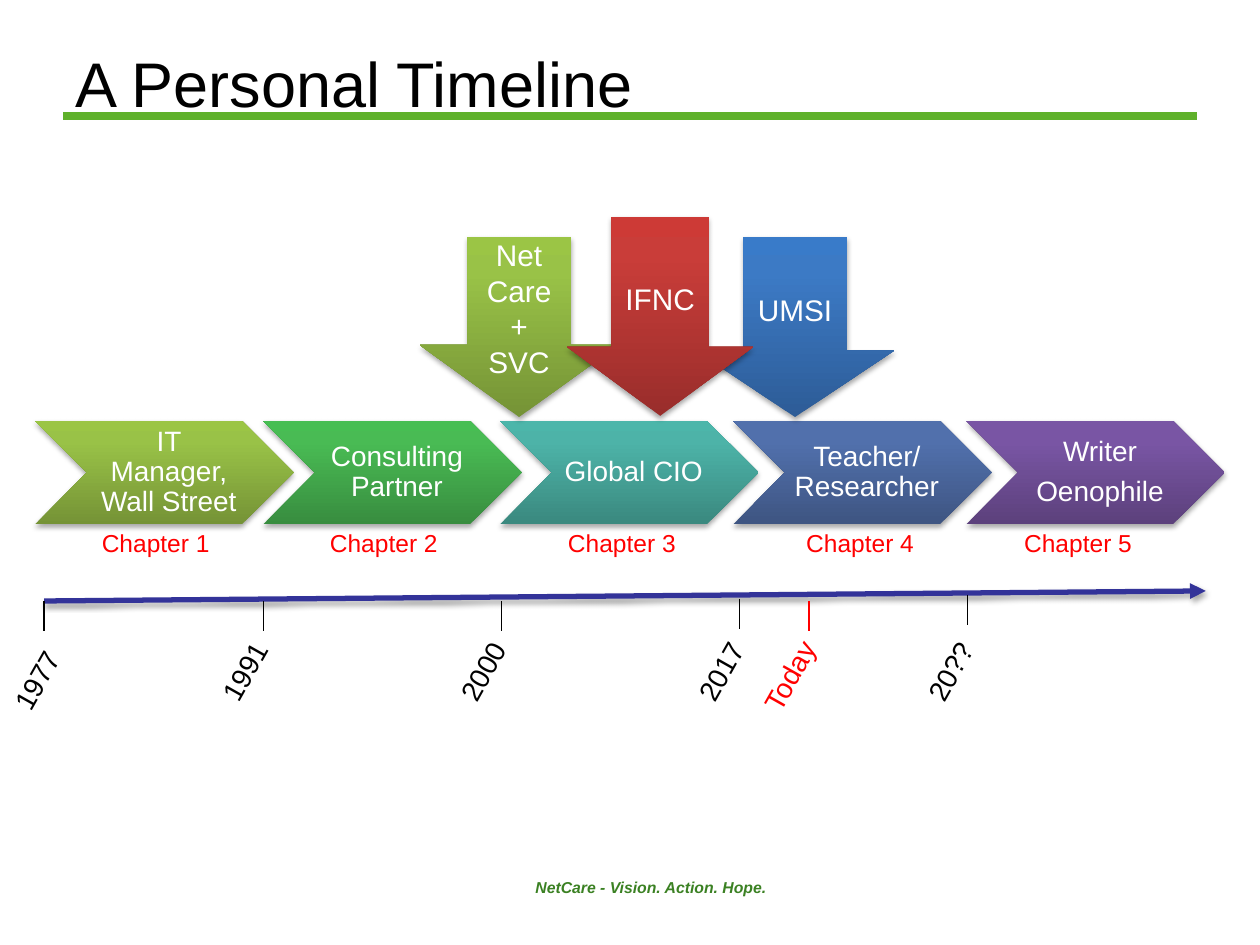
"""Build the personal timeline slide: career chevrons, side roles and a dated axis."""
from copy import deepcopy

from lxml import etree
from pptx import Presentation
from pptx.dml.color import RGBColor
from pptx.enum.shapes import MSO_CONNECTOR, MSO_SHAPE
from pptx.enum.text import MSO_ANCHOR, PP_ALIGN
from pptx.oxml import parse_xml
from pptx.oxml.ns import nsdecls, qn
from pptx.util import Inches, Pt

STRAIGHT = MSO_CONNECTOR.STRAIGHT
CHEVRON, DOWN_ARROW = MSO_SHAPE.CHEVRON, MSO_SHAPE.DOWN_ARROW
MIDDLE, TOP = MSO_ANCHOR.MIDDLE, MSO_ANCHOR.TOP
LEFT, CENTER = PP_ALIGN.LEFT, PP_ALIGN.CENTER

BLACK = RGBColor(0x00, 0x00, 0x00)
WHITE = RGBColor(0xFF, 0xFF, 0xFF)
RED = RGBColor(0xFF, 0x00, 0x00)
NAVY = RGBColor(0x33, 0x33, 0x99)
RULE_GREEN = RGBColor(0x5F, 0xB1, 0x2B)
FOOTER_GREEN = RGBColor(0x3B, 0x81, 0x23)
LIME = (RGBColor(0x75, 0x93, 0x36), RGBColor(0x99, 0xC2, 0x47), RGBColor(0x9B, 0xC5, 0x45))
GREEN = (RGBColor(0x38, 0x8D, 0x3F), RGBColor(0x49, 0xBB, 0x54), RGBColor(0x47, 0xBE, 0x53))
TEAL = (RGBColor(0x3A, 0x89, 0x7F), RGBColor(0x4D, 0xB3, 0xA8), RGBColor(0x4C, 0xB6, 0xAA))
STEEL = (RGBColor(0x3E, 0x55, 0x82), RGBColor(0x51, 0x70, 0xAC), RGBColor(0x50, 0x6F, 0xAF))
PURPLE = (RGBColor(0x5C, 0x41, 0x7C), RGBColor(0x79, 0x55, 0xA4), RGBColor(0x79, 0x55, 0xA6))
BLUE = (RGBColor(0x2D, 0x5C, 0x97), RGBColor(0x3C, 0x7A, 0xC5), RGBColor(0x39, 0x7B, 0xC9))
CRIMSON = (RGBColor(0x99, 0x2D, 0x2B), RGBColor(0xC9, 0x3D, 0x39), RGBColor(0xCD, 0x3A, 0x36))

SHADOW = (f'<a:effectLst {nsdecls("a")}><a:outerShdw blurRad="39370" dist="22860" dir="5400000" '
          'rotWithShape="0"><a:srgbClr val="000000"><a:alpha val="35000"/></a:srgbClr>'
          '</a:outerShdw></a:effectLst>')
CHEVRON_TOP, CHEVRON_W, CHEVRON_H = 3.34, 2.05, 0.82
CHAPTER_TOP, TICK_H = 4.14, 0.24


def write(sp, lines, size, color, align=LEFT, anchor=TOP, spacing=None, before=0, **style):
    tf = sp.text_frame
    tf.vertical_anchor = anchor
    for i, line in enumerate(lines):
        p = tf.paragraphs[0] if i == 0 else tf.add_paragraph()
        p.alignment, p.line_spacing = align, spacing
        if i and before:
            p.space_before = Pt(before)
        r = p.add_run()
        r.text = line
        r.font.color.rgb = color
        for key, value in dict(size=Pt(size), name="Arial", **style).items():
            setattr(r.font, key, value)


def add_block(kind, box, adjustments, colors):
    sp = s.shapes.add_shape(kind, *map(Inches, box))
    for i, value in enumerate(adjustments):
        sp.adjustments[i] = value
    sp.fill.gradient()
    sp.fill.gradient_angle = 90
    stops = sp._element.spPr.find(".//" + qn("a:gsLst"))
    stops.insert(1, deepcopy(stops[0]))
    for stop, position, color in zip(sp.fill.gradient_stops, (0, 0.8, 1), colors):
        stop.position = position
        stop.color.rgb = color
    sp.line.fill.background()
    sp._element.spPr.append(parse_xml(SHADOW))
    return sp


prs = Presentation()
prs.slide_width, prs.slide_height = Inches(10), Inches(7.5)
s = prs.slides.add_slide(prs.slide_layouts[5])

chapters = [
    (0.28, 0.71, ["IT Manager, Wall Street"], LIME),
    (2.09, 2.52, ["Consulting Partner"], GREEN),
    (3.97, 4.41, ["Global CIO"], TEAL),
    (5.82, 6.3, ["Teacher/ Researcher"], STEEL),
    (7.67, 8.03, ["Writer", "Oenophile"], PURPLE),
]
for number, (x, label_x, lines, colors) in enumerate(chapters, 1):
    sp = add_block(CHEVRON, (x, CHEVRON_TOP, CHEVRON_W, CHEVRON_H), [0.5], colors)
    tf = sp.text_frame
    tf.margin_left, tf.margin_right = Inches(0.07), 0
    tf.margin_top = tf.margin_bottom = Inches(0.02)
    write(sp, lines, 16, WHITE, CENTER, MIDDLE, spacing=0.9, before=5.6)
    sp = s.shapes.add_textbox(*map(Inches, (label_x, CHAPTER_TOP, 1.06, 0.34)))
    write(sp, [f"Chapter {number}"], 14, RED)

lines = [
    ((0.5, 0.92, 9.5, 0.92), RULE_GREEN, 4.5),
    ((0.35, 4.77, 9.57, 4.69), NAVY, 3),
]
ticks = [(0.35, 4.77, BLACK, 0.75), (2.09, 4.77, BLACK, 0.75), (3.98, 4.77, BLACK, 0.75),
         (5.87, 4.75, BLACK, 0.75), (7.68, 4.72, BLACK, 0.75), (6.42, 4.77, RED, 1)]
lines += [((x, y, x, y + TICK_H), color, width) for x, y, color, width in ticks]
for ends, color, width in lines:
    line = s.shapes.add_connector(STRAIGHT, *map(Inches, ends))
    line.line.color.rgb, line.line.width = color, Pt(width)
    if color == NAVY:
        etree.SubElement(line.line._get_or_add_ln(), qn("a:tailEnd"), type="triangle")
        line._element.spPr.append(parse_xml(SHADOW))
    else:
        etree.SubElement(line._element.spPr, qn("a:effectLst"))

dates = [("1977", -0.08, 5.17, 0.79, BLACK), ("1991", 1.57, 5.1, 0.79, BLACK),
         ("2000", 3.46, 5.1, 0.79, BLACK), ("2017", 5.35, 5.1, 0.79, BLACK),
         ("20??", 7.17, 5.1, 0.79, BLACK), ("Today", 5.85, 5.14, 0.87, RED)]
for date, x, y, width, color in dates:
    sp = s.shapes.add_textbox(*map(Inches, (x, y, width, 0.37)))
    sp.rotation = 299.4
    write(sp, [date], 16, color)

roles = [
    ((5.52, 1.88, 1.58, 1.43), 0.37, ["UMSI"], BLUE),
    ((3.33, 1.88, 1.58, 1.43), 0.4, ["Net Care+", "SVC"], LIME),
    ((4.5, 1.72, 1.48, 1.58), 0.37, ["IFNC"], CRIMSON),
]
for box, head, lines, colors in roles:
    sp = add_block(DOWN_ARROW, box, [head, 0.52], colors)
    sp.adjustments[0], sp.adjustments[1] = 0.52, head
    write(sp, lines, 17, WHITE, CENTER, MIDDLE)

sp = s.shapes.add_textbox(*map(Inches, (3.33, 6.92, 3.67, 0.35)))
sp.text_frame.word_wrap = True
write(sp, ["NetCare - Vision. Action. Hope."], 9, FOOTER_GREEN, CENTER, bold=True, italic=True)

title = s.shapes.title
title.left, title.top, title.width, title.height = map(Inches, (0.5, 0.38, 9, 0.55))
write(title, ["A Personal Timeline"], 36, BLACK, LEFT, MIDDLE)
s.shapes._spTree.append(title._element)

prs.save("out.pptx")
